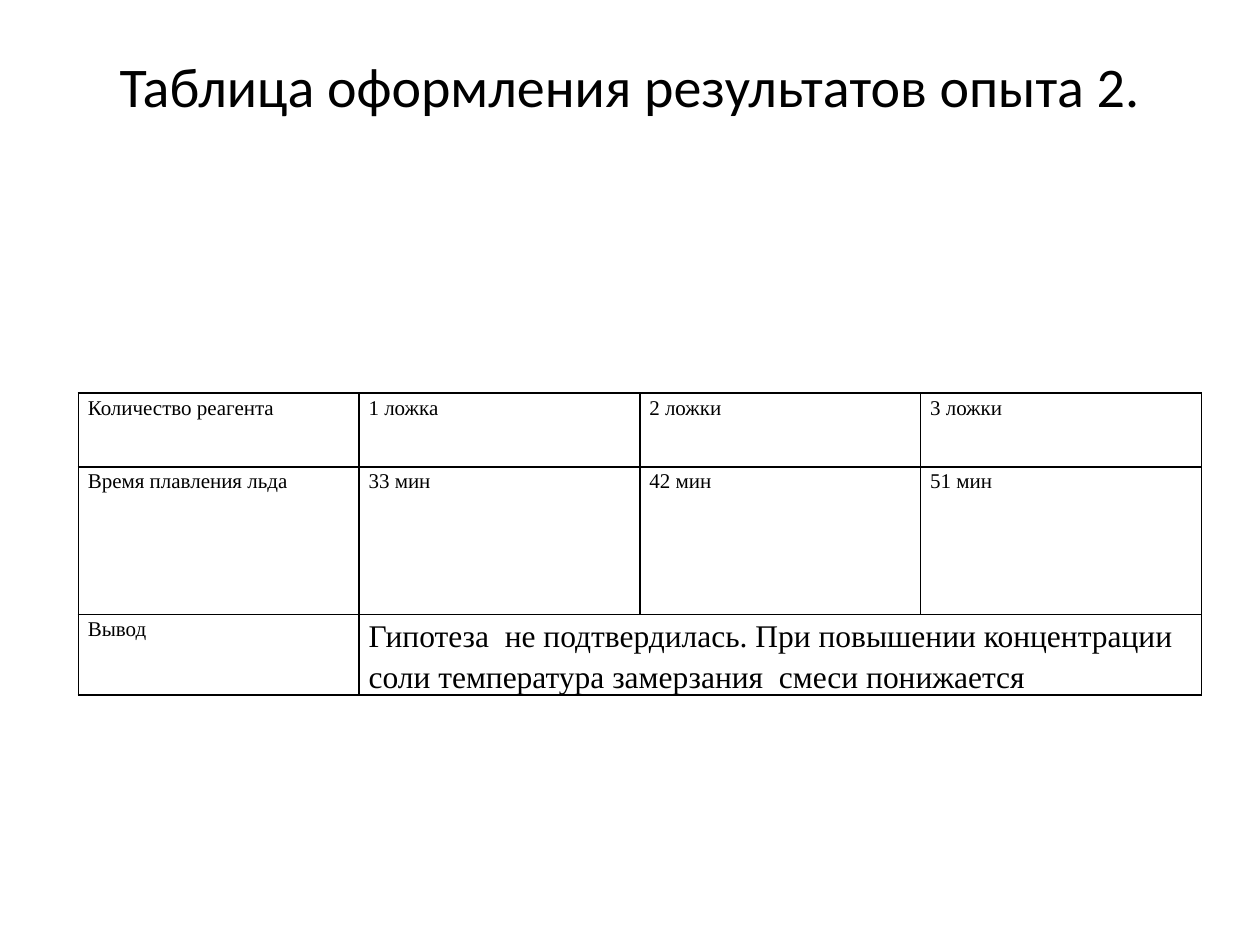
import lxml.etree
import pptx
import pptx.dml.color
import pptx.enum.text
import pptx.oxml.ns
import pptx.util

Cm = pptx.util.Cm
Pt = pptx.util.Pt
COLORS = {"text": "000000", "border": "000000"}
ROWS = [
    ["Количество реагента", "1 ложка", "2 ложки", "3 ложки"],
    ["Время плавления льда", "33 мин", "42 мин", "51 мин"],
    ["Вывод", "Гипотеза  не подтвердилась. При повышении концентрации "
              "соли температура замерзания  смеси понижается"],
]
ROW_HEIGHTS = [1.49, 2.98, 1.49]
COLUMN_WIDTH = 5.66


class SlideBuilder:
    title_font = "Calibri"
    table_font = "Times New Roman"

    def __init__(self, slide):
        self.slide = slide

    def run(self, p, text, font, size):
        r = p.add_run()
        r.text = text
        r.font.name = font
        r.font.size = Pt(size)
        r.font.color.rgb = pptx.dml.color.RGBColor.from_string(COLORS["text"])

    def title(self, text, left, top, width, height):
        sp = self.slide.shapes.title
        sp.left, sp.top, sp.width, sp.height = map(Cm, (left, top, width, height))
        tf = sp.text_frame
        tf.word_wrap = True
        tf.vertical_anchor = pptx.enum.text.MSO_ANCHOR.MIDDLE
        tf.margin_bottom = Cm(1.4)
        p = tf.paragraphs[0]
        p.alignment = pptx.enum.text.PP_ALIGN.CENTER
        self.run(p, text, self.title_font, 32)

    def borders(self, cell):
        props = cell._tc.get_or_add_tcPr()
        qn = pptx.oxml.ns.qn
        for side in ("a:lnL", "a:lnR", "a:lnT", "a:lnB"):
            line = lxml.etree.SubElement(props, qn(side), w=str(Pt(1)))
            fill = lxml.etree.SubElement(line, qn("a:solidFill"))
            lxml.etree.SubElement(fill, qn("a:srgbClr"), val=COLORS["border"])

    def table(self, left, top, column_width, row_heights):
        count = 4
        frame = self.slide.shapes.add_table(
            len(row_heights), count, Cm(left), Cm(top),
            Cm(column_width * count), Cm(sum(row_heights)))
        table = frame.table
        table.first_row = table.horz_banding = False
        for column in table.columns:
            column.width = Cm(column_width)
        for row, height in zip(table.rows, row_heights):
            row.height = Cm(height)
        for cell in table.iter_cells():
            self.borders(cell)
            cell.fill.background()
            cell.margin_left = cell.margin_right = Cm(0.19)
            cell.margin_top = cell.margin_bottom = Cm(0)
        return table

    def cell(self, cell, text, size):
        p = cell.text_frame.paragraphs[0]
        p.line_spacing = 1.15
        self.run(p, text, self.table_font, size)


def main():
    prs = pptx.Presentation()
    prs.slide_width, prs.slide_height = Cm(25.4), Cm(19.05)
    s = SlideBuilder(prs.slides.add_slide(prs.slide_layouts[5]))
    s.title("Таблица оформления результатов опыта 2.", 1.27, 0.76, 22.86, 3.18)
    table = s.table(1.58, 7.92, COLUMN_WIDTH, ROW_HEIGHTS)
    table.cell(2, 1).merge(table.cell(2, 3))
    for i, row in enumerate(ROWS):
        for j, text in enumerate(row):
            cell = table.cell(i, j)
            s.cell(cell, text, 18 if cell.is_merge_origin else 12)
    prs.save("out.pptx")


if __name__ == "__main__":
    main()
